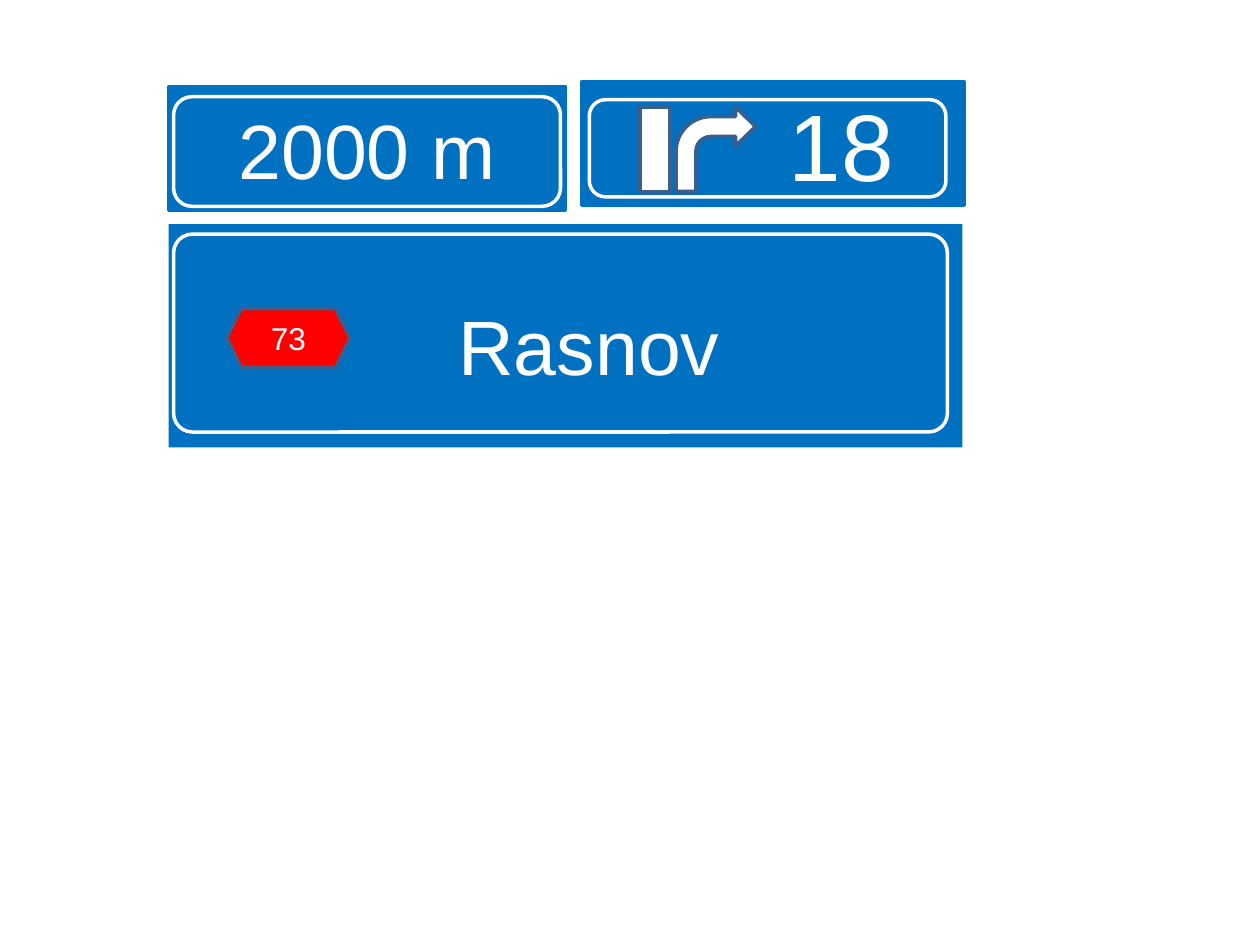
from dataclasses import dataclass

from pptx import Presentation
from pptx.dml.color import RGBColor
from pptx.enum import shapes, text
from pptx.util import Cm, Pt

SHAPE = shapes.MSO_SHAPE


@dataclass(frozen=True)
class Theme:
    font: str = "Arial"
    blue: str = "0070C0"
    white: str = "FFFFFF"
    red: str = "FF0000"
    outline: str = "3A5F8C"
    line: float = 2
    exit_size: int = 54
    sign_size: int = 44
    route_size: int = 18


T = Theme()


def add_shape(s, kind, box, fill=None, line=None, adj=()):
    """Place a flat shape; box is left, top, width, height in cm."""
    sp = s.shapes.add_shape(kind, *map(Cm, box))
    sp.shadow.inherit = False
    for i, value in enumerate(adj):
        sp.adjustments[i] = value
    if fill:
        sp.fill.solid()
        sp.fill.fore_color.rgb = RGBColor.from_string(fill)
    else:
        sp.fill.background()
    if line:
        sp.line.color.rgb = RGBColor.from_string(line)
        sp.line.width = Pt(T.line)
    else:
        sp.line.fill.background()
    return sp


def add_text(sp, content, size, insets=(0.25, 0.13, 0.25, 0.13),
             anchor=text.MSO_ANCHOR.MIDDLE, before=0):
    """Write one centred line; insets are left, top, right, bottom in cm."""
    tf = sp.text_frame
    tf.word_wrap = True
    tf.vertical_anchor = anchor
    tf.margin_left, tf.margin_top, tf.margin_right, tf.margin_bottom = map(Cm, insets)
    p = tf.paragraphs[0]
    p.alignment = text.PP_ALIGN.CENTER
    p.space_before = Pt(before)
    r = p.add_run()
    r.text = content
    r.font.name = T.font
    r.font.size = Pt(size)
    r.font.color.rgb = RGBColor.from_string(T.white)


def inside(box, x, y, w, h):
    """Move a part given relative to the box onto the slide."""
    return box[0] + x, box[1] + y, w, h


def add_frame(s, box, radius=0.167):
    add_shape(s, SHAPE.ROUNDED_RECTANGLE, box, line=T.white, adj=[radius])


def add_plate(s, box):
    return add_shape(s, SHAPE.ROUNDED_RECTANGLE, box, T.blue, T.blue, [0])


def distance_sign(s, box):
    add_text(add_plate(s, box), "2000 m", T.sign_size)
    add_frame(s, inside(box, 0.1, 0.2, 7.8, 2.21))


def exit_sign(s, box):
    add_text(add_plate(s, box), "18", T.exit_size, insets=(3, 0.13, 0.25, 0.13))
    # Main road and the exit branching off it
    add_shape(s, SHAPE.RECTANGLE, inside(box, 1.17, 0.51, 0.61, 1.7),
              T.white, T.outline)
    add_shape(s, SHAPE.BENT_ARROW, inside(box, 1.9, 0.51, 1.6, 1.7),
              T.white, T.outline, [0.25, 0.245, 0.25, 0.438])
    add_frame(s, inside(box, 0.15, 0.36, 7.19, 1.96))


def destination_sign(s, box):
    plate = add_shape(s, SHAPE.RECTANGLE, box, T.blue)
    add_text(plate, "Rasnov", T.sign_size, insets=(1.2, 1.5, 0.25, 0.6),
             anchor=text.MSO_ANCHOR.TOP, before=4.5)
    add_frame(s, inside(box, 0.1, 0.2, 15.6, 3.99), radius=0.095)
    # Route number
    route = add_shape(s, SHAPE.HEXAGON, inside(box, 1.17, 1.7, 2.49, 1.19),
                      T.red, T.outline)
    add_text(route, "73", T.route_size)


def main():
    prs = Presentation()
    prs.slide_width, prs.slide_height = Cm(25.4), Cm(19.05)
    s = prs.slides.add_slide(prs.slide_layouts[6])
    distance_sign(s, (3.4, 1.75, 8, 2.49))
    exit_sign(s, (11.73, 1.65, 7.7, 2.49))
    destination_sign(s, (3.4, 4.52, 16, 4.5))
    prs.save("out.pptx")


if __name__ == "__main__":
    main()
